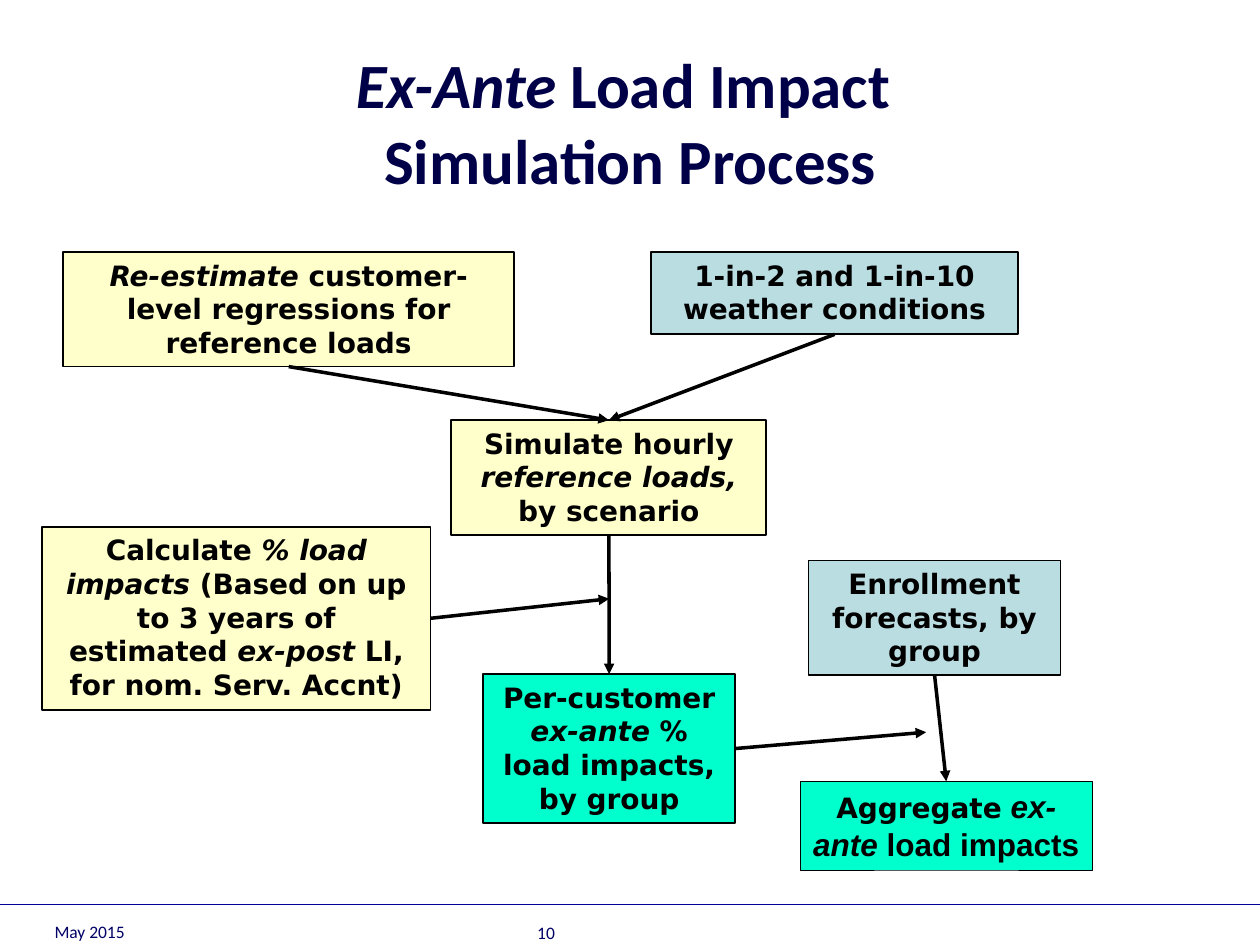
from copy import deepcopy
from lxml.etree import SubElement
from pptx import Presentation
from pptx.dml.color import RGBColor
from pptx.enum.shapes import MSO_CONNECTOR, MSO_SHAPE
from pptx.enum.text import MSO_ANCHOR, MSO_AUTO_SIZE, PP_ALIGN
from pptx.oxml.ns import qn
from pptx.util import Cm, Pt

HUES = {
    "ink": "000000", "cream": "FFFFCC", "blue": "BADDE1", "mint": "00FFCC",
    "title": "000048", "foot": "000066", "rule": "000099",
}
BODY = {"name": "DejaVu Sans", "size": Pt(16), "bold": True}
ARIAL = {"name": "Arial", "size": Pt(18), "bold": True}
HEAD = {"name": "Calibri", "size": Pt(36), "bold": True}
FOOT = {"name": "Calibri", "size": Pt(10), "bold": False}
FRAME = {"word_wrap": True, "auto_size": MSO_AUTO_SIZE.SHAPE_TO_FIT_TEXT,
         "vertical_anchor": MSO_ANCHOR.TOP}
TOP, LEFT, BOTTOM, RIGHT = range(4)

# name: fill, line width, place (cm), text; asterisks enclose italics
BOXES = {
    "weather": ("blue", 1, (13.12, 5.08, 7.41, 1.66),
                "1-in-2 and 1-in-10 weather conditions"),
    "simulate": ("cream", 1, (9.1, 8.47, 6.35, 2.31),
                 "Simulate hourly *reference loads, *by scenario"),
    "regress": ("cream", 1, (1.27, 5.08, 9.1, 2.31),
                "*Re-estimate* customer-level regressions for reference loads"),
    "percent": ("cream", 1, (0.85, 10.62, 7.83, 3.69),
                "Calculate *% load impacts* (Based on up to 3 years of "
                "estimated *ex-post* LI, for nom. Serv. Accnt)"),
    "enroll": ("blue", 1, (16.3, 11.3, 5.08, 2.31),
               "Enrollment forecasts, by group"),
    "customer": ("mint", 1, (9.74, 13.59, 5.08, 3),
                 "Per-customer* ex-ante* % load impacts, by group"),
    "total": ("mint", 0.5, (16.13, 15.75, 5.89, 1.79), "Aggregate"),
}
FLOWS = [("weather", "simulate"), ("regress", "simulate"),
         ("simulate", "customer"), ("enroll", "total")]
# Arrows that leave a box sideways and end at a free point
FEEDS = [("percent", (12.28, 12.07)), ("customer", (18.67, 14.76))]


def rgb(name):
    return RGBColor.from_string(HUES[name])


def apply(item, form):
    for key, value in form.items():
        setattr(item, key, value)


def write(par, text, form, hue="ink"):
    """Add runs to a paragraph, switching italics at each asterisk."""
    for i, part in enumerate(text.split("*")):
        for j, line in enumerate(part.split("\n")):
            if j:
                par.add_line_break()
                par._p[-1].append(deepcopy(run.font._element))
            if line:
                run = par.add_run()
                run.text = line
                apply(run.font, {**form, "italic": i % 2 == 1})
                run.font.color.rgb = rgb(hue)


def add_box(slide, fill, width, place, text):
    box = slide.shapes.add_shape(MSO_SHAPE.RECTANGLE, *map(Cm, place))
    box.shadow.inherit = False
    box.fill.solid()
    box.fill.fore_color.rgb = rgb(fill)
    box.line.color.rgb = rgb("ink")
    box.line.width = Pt(width)
    apply(box.text_frame, FRAME)
    par = box.text_frame.paragraphs[0]
    par.alignment = PP_ALIGN.CENTER
    write(par, text, BODY)
    return box


def add_line(slide, start, end, hue="ink", width=2, head=True):
    line = slide.shapes.add_connector(
        MSO_CONNECTOR.STRAIGHT, *map(Cm, start + end))
    line.line.color.rgb = rgb(hue)
    line.line.width = Pt(width)
    if head:
        SubElement(line.line._ln, qn("a:tailEnd"), type="triangle")
    SubElement(line._element.spPr, qn("a:effectLst"))
    return line


def add_note(slide, place, text):
    note = slide.shapes.add_textbox(*map(Cm, place))
    apply(note.text_frame, {"word_wrap": True,
                            "vertical_anchor": MSO_ANCHOR.BOTTOM})
    write(note.text_frame.paragraphs[0], text, FOOT, "foot")


def set_title(slide, place, text):
    title = slide.shapes.title
    apply(title, dict(zip(("left", "top", "width", "height"), map(Cm, place))))
    apply(title.text_frame, {"word_wrap": True,
                             "auto_size": MSO_AUTO_SIZE.NONE,
                             "vertical_anchor": MSO_ANCHOR.MIDDLE})
    par = title.text_frame.paragraphs[0]
    par.alignment = PP_ALIGN.CENTER
    write(par, text, HEAD, "title")


def main():
    deck = Presentation()
    deck.slide_width, deck.slide_height = Cm(25.4), Cm(19.05)
    slide = deck.slides.add_slide(deck.slide_layouts[5])

    # Title and footer
    set_title(slide, (1.91, 0.85, 21.59, 3.18),
              "*Ex-Ante *Load Impact \nSimulation Process")
    add_line(slide, (0, 18.23), (25.4, 18.23), "rule", 0.75, False)
    add_note(slide, (0.85, 17.8, 5.93, 1.32), "May 2015")
    add_note(slide, (10.58, 17.82, 5.93, 1.32), "10")

    # Process boxes
    boxes = {name: add_box(slide, *data) for name, data in BOXES.items()}
    write(boxes["total"].text_frame.paragraphs[0],
          " *ex-ante* load impacts", ARIAL)

    # Arrows between boxes
    for tail, tip in FLOWS:
        line = add_line(slide, (0, 0), (1, 1))
        line.begin_connect(boxes[tail], BOTTOM)
        line.end_connect(boxes[tip], TOP)
    for tail, point in FEEDS:
        line = add_line(slide, (0, 0), point)
        line.begin_connect(boxes[tail], RIGHT)

    deck.save("out.pptx")


if __name__ == "__main__":
    main()
